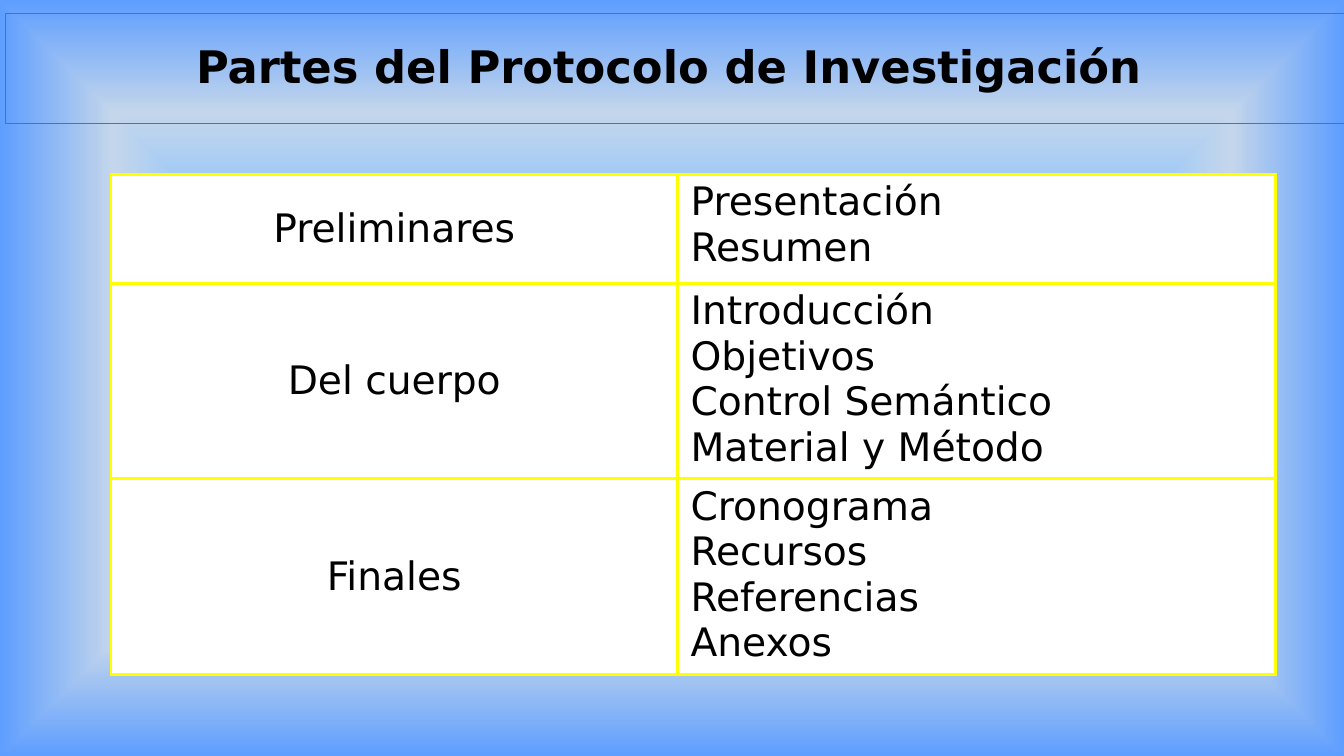
from pptx import Presentation
from pptx.dml.color import RGBColor
from pptx.enum.text import MSO_ANCHOR as Anchor, PP_ALIGN as Align
from pptx.oxml import parse_xml
from pptx.oxml.ns import nsdecls
from pptx.util import Inches, Pt

FONT = "DejaVu Sans"
COLORS = {
    "text": "000000",
    "title_line": "4472C4",
    "cell": "FFFFFF",
    "border": "FFFF00",
    "inner": "85C2FF",
    "middle": "C4D6EB",
    "outer": "5E9EFF",
}
PARTS = [
    ("Preliminares", ["Presentación", "Resumen"]),
    ("Del cuerpo", ["Introducción", "Objetivos", "Control Semántico", "Material y Método"]),
    ("Finales", ["Cronograma", "Recursos", "Referencias", "Anexos"]),
]


def color(name):
    """Return the named palette colour."""
    return RGBColor.from_string(COLORS[name])


def style_paragraph(para, size, align, bold=False):
    """Set the font and alignment of a paragraph."""
    para.alignment = align
    para.font.name = FONT
    para.font.size = Pt(size)
    para.font.bold = bold
    para.font.color.rgb = color("text")


def paint_background(page):
    """Fill the page with a gradient that runs from the centre to the edges."""
    stops = "".join(
        f'<a:gs pos="{position * 1000}"><a:srgbClr val="{COLORS[name]}"/></a:gs>'
        for position, name in [(40, "inner"), (70, "middle"), (100, "outer")]
    )
    background = parse_xml(
        f'<p:bg {nsdecls("p", "a")}><p:bgPr><a:gradFill><a:gsLst>{stops}</a:gsLst>'
        '<a:path path="shape"><a:fillToRect l="50000" t="50000" r="50000" b="50000"/></a:path>'
        "</a:gradFill><a:effectLst/></p:bgPr></p:bg>"
    )
    page._element.cSld.insert(0, background)


def place_title(page, left, top, width, height):
    """Place the outlined title across the top of the page."""
    title = page.shapes.title
    title.left, title.top = Inches(left), Inches(top)
    title.width, title.height = Inches(width), Inches(height)
    title.line.color.rgb = color("title_line")
    title.line.width = Pt(0.75)
    frame = title.text_frame
    frame.text = "Partes del Protocolo de Investigación "
    frame.vertical_anchor = Anchor.MIDDLE
    frame.paragraphs[0].line_spacing = 0.9
    style_paragraph(frame.paragraphs[0], 32, Align.CENTER, bold=True)


def fill_cell(cell, lines, align, anchor):
    """Write lines of text in a bordered cell."""
    properties = cell._tc.get_or_add_tcPr()
    for side in ("lnL", "lnR", "lnT", "lnB"):
        properties.append(parse_xml(
            f'<a:{side} {nsdecls("a")} w="{Pt(2.25)}"><a:solidFill>'
            f'<a:srgbClr val="{COLORS["border"]}"/></a:solidFill></a:{side}>'
        ))
    cell.fill.solid()
    cell.fill.fore_color.rgb = color("cell")
    cell.margin_left = cell.margin_right = Inches(0.13)
    cell.margin_top = cell.margin_bottom = Inches(0.05)
    cell.vertical_anchor = anchor
    cell.text = "\n".join(lines)
    for para in cell.text_frame.paragraphs:
        indent = para._p.get_or_add_pPr()
        indent.set("marL", str(Inches(0.38)))
        indent.set("indent", str(Inches(-0.38)))
        style_paragraph(para, 28, align)


def place_parts_table(page, left, top, width, height):
    """Place the table of protocol parts and their sections."""
    table = page.shapes.add_table(
        len(PARTS), 2, Inches(left), Inches(top), Inches(width), Inches(height)
    ).table
    table.first_row = table.horz_banding = False
    table.columns[0].width = Inches(5.62)
    table.columns[1].width = Inches(width - 5.62)
    for row, row_height in zip(table.rows, (1.08, 1.94, 1.94)):
        row.height = Inches(row_height)
    for index, (part, sections) in enumerate(PARTS):
        fill_cell(table.cell(index, 0), [part], Align.CENTER, Anchor.MIDDLE)
        fill_cell(table.cell(index, 1), sections, Align.LEFT, Anchor.TOP)


def main():
    """Build the slide and save the deck."""
    deck = Presentation()
    deck.slide_width, deck.slide_height = Inches(13.33), Inches(7.5)
    page = deck.slides.add_slide(deck.slide_layouts[5])
    paint_background(page)
    place_title(page, 0.05, 0.13, 13.33, 1.1)
    place_parts_table(page, 1.1, 1.73, 11.55, 4.96)
    deck.save("out.pptx")


if __name__ == "__main__":
    main()
